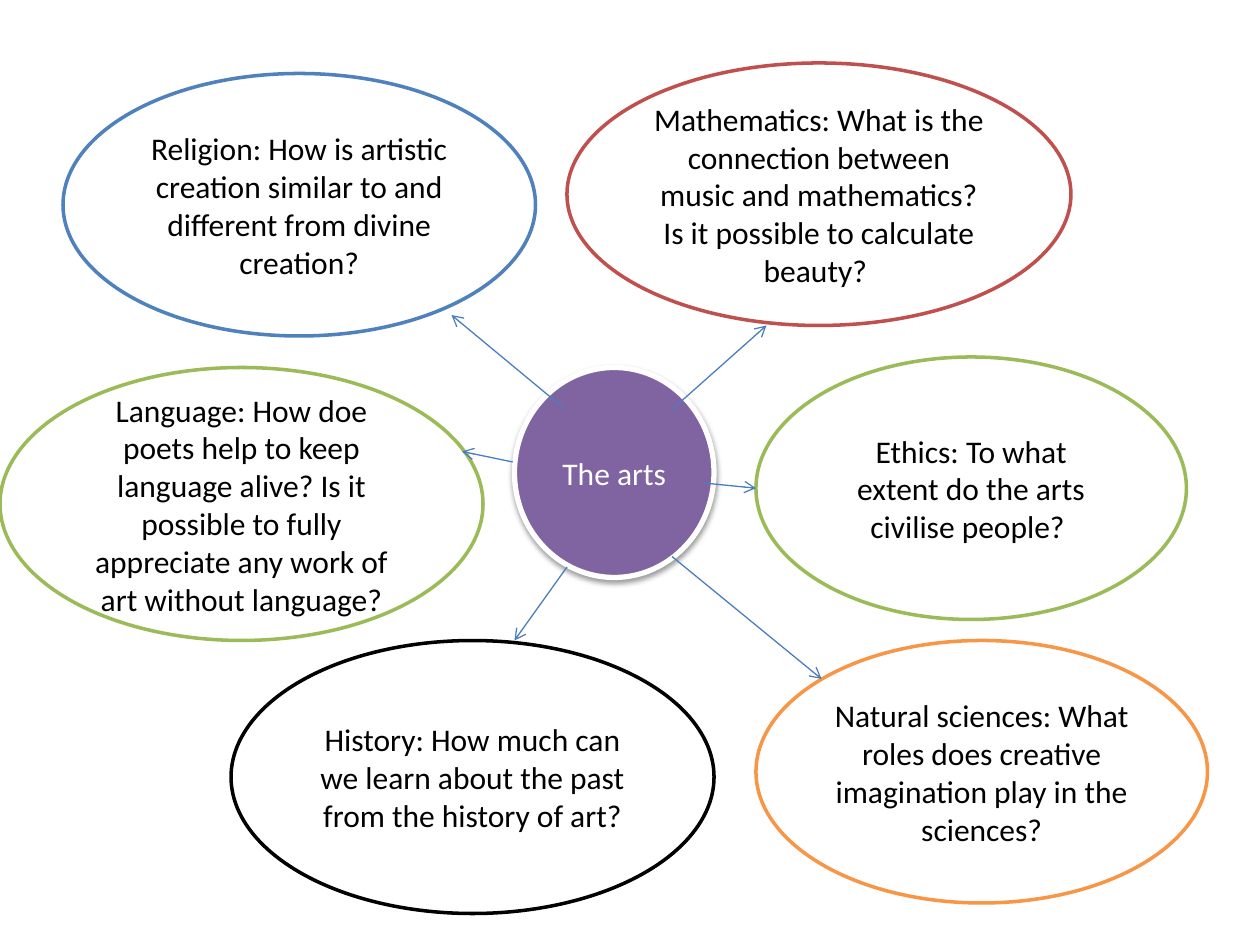
from dataclasses import dataclass

from lxml.etree import SubElement
from pptx import Presentation
from pptx.dml.color import RGBColor
from pptx.enum.shapes import MSO_CONNECTOR as Connector, MSO_SHAPE as Shape
from pptx.enum.text import MSO_ANCHOR as Anchor, PP_ALIGN as Align
from pptx.oxml.ns import qn
from pptx.util import Pt


@dataclass(frozen=True)
class Theme:
    font: str = "Calibri"
    text_size: float = 18
    white: str = "FFFFFF"
    black: str = "000000"
    purple: str = "8064A2"
    blue: str = "4F81BD"
    red: str = "C0504D"
    green: str = "9BBB59"
    orange: str = "F79646"
    arrow: str = "4B7EBC"
    hub_line: float = 3
    topic_line: float = 2
    arrow_line: float = 0.75


THEME = Theme()

# Box of each topic (left, top, width, height), outline, paragraphs
TOPICS = [
    ((36, 42, 270, 150), THEME.blue,
     ["Religion: How is artistic creation similar to and different from divine creation?"]),
    ((324, 36, 288, 150), THEME.red,
     ["Mathematics: What is the connection between music and mathematics?",
      "Is it possible to calculate beauty? "]),
    ((0, 210, 276, 156), THEME.green,
     ["Language: How doe poets help to keep language alive? Is it possible to fully "
      "appreciate any work of art without language?"]),
    ((432, 204, 246, 150), THEME.green,
     ["Ethics: To what extent do the arts civilise people? "]),
    ((432, 366, 258, 150), THEME.orange,
     ["Natural sciences: What roles does creative imagination play in the sciences?"]),
    ((132, 366, 276, 156), THEME.black,
     ["History: How much can we learn about the past from the history of art?"]),
]

# Start and end of the arrow to each topic, in the same order
ARROWS = [
    ((322.5, 233.5), (258, 180)),
    ((384, 234), (438, 186)),
    ((293, 264), (264, 258)),
    ((402, 276), (432, 279)),
    ((384, 318), (469.5, 388)),
    ((324, 324), (294, 366)),
]


def rgb(colour):
    return RGBColor.from_string(colour)


def add_bubble(slide, box, paragraphs, fill, outline, line_width, text_colour):
    bubble = slide.shapes.add_shape(Shape.OVAL, *map(Pt, box))
    bubble.shadow.inherit = False
    bubble.fill.solid()
    bubble.fill.fore_color.rgb = rgb(fill)
    bubble.line.color.rgb = rgb(outline)
    bubble.line.width = Pt(line_width)
    frame = bubble.text_frame
    frame.word_wrap = True
    frame.vertical_anchor = Anchor.MIDDLE
    frame.text = "\n".join(paragraphs)
    for paragraph in frame.paragraphs:
        paragraph.alignment = Align.CENTER
        paragraph.font.name = THEME.font
        paragraph.font.size = Pt(THEME.text_size)
        paragraph.font.color.rgb = rgb(text_colour)
    return bubble


def add_soft_shadow(bubble):
    effects = bubble._element.spPr.find(qn("a:effectLst"))
    shadow = SubElement(effects, qn("a:outerShdw"), blurRad=str(Pt(3.1)),
                        dist=str(Pt(1.6)), dir="5400000", rotWithShape="0")
    colour = SubElement(shadow, qn("a:srgbClr"), val=THEME.black)
    SubElement(colour, qn("a:alpha"), val="38000")


def add_arrow(slide, start, end):
    arrow = slide.shapes.add_connector(Connector.STRAIGHT, *map(Pt, start + end))
    arrow.line.color.rgb = rgb(THEME.arrow)
    arrow.line.width = Pt(THEME.arrow_line)
    SubElement(arrow.line._get_or_add_ln(), qn("a:tailEnd"), type="arrow")
    SubElement(arrow._element.spPr, qn("a:effectLst"))


def add_mind_map(slide, box):
    """Place the hub, its topics and the arrows, offset by the corner of box."""
    left, top, width, height = box

    def shifted(x, y, *size):
        return (left + x, top + y, *size)

    hub = add_bubble(slide, shifted(294, 210, 114, 120), ["The arts"],
                     THEME.purple, THEME.white, THEME.hub_line, THEME.white)
    add_soft_shadow(hub)
    for topic_box, outline, paragraphs in TOPICS:
        add_bubble(slide, shifted(*topic_box), paragraphs,
                   THEME.white, outline, THEME.topic_line, THEME.black)
    for start, end in ARROWS:
        add_arrow(slide, shifted(*start), shifted(*end))


def main():
    deck = Presentation()
    deck.slide_width, deck.slide_height = Pt(720), Pt(540)
    slide = deck.slides.add_slide(deck.slide_layouts[6])
    add_mind_map(slide, (0, 0, 720, 540))
    deck.save("out.pptx")


if __name__ == "__main__":
    main()
